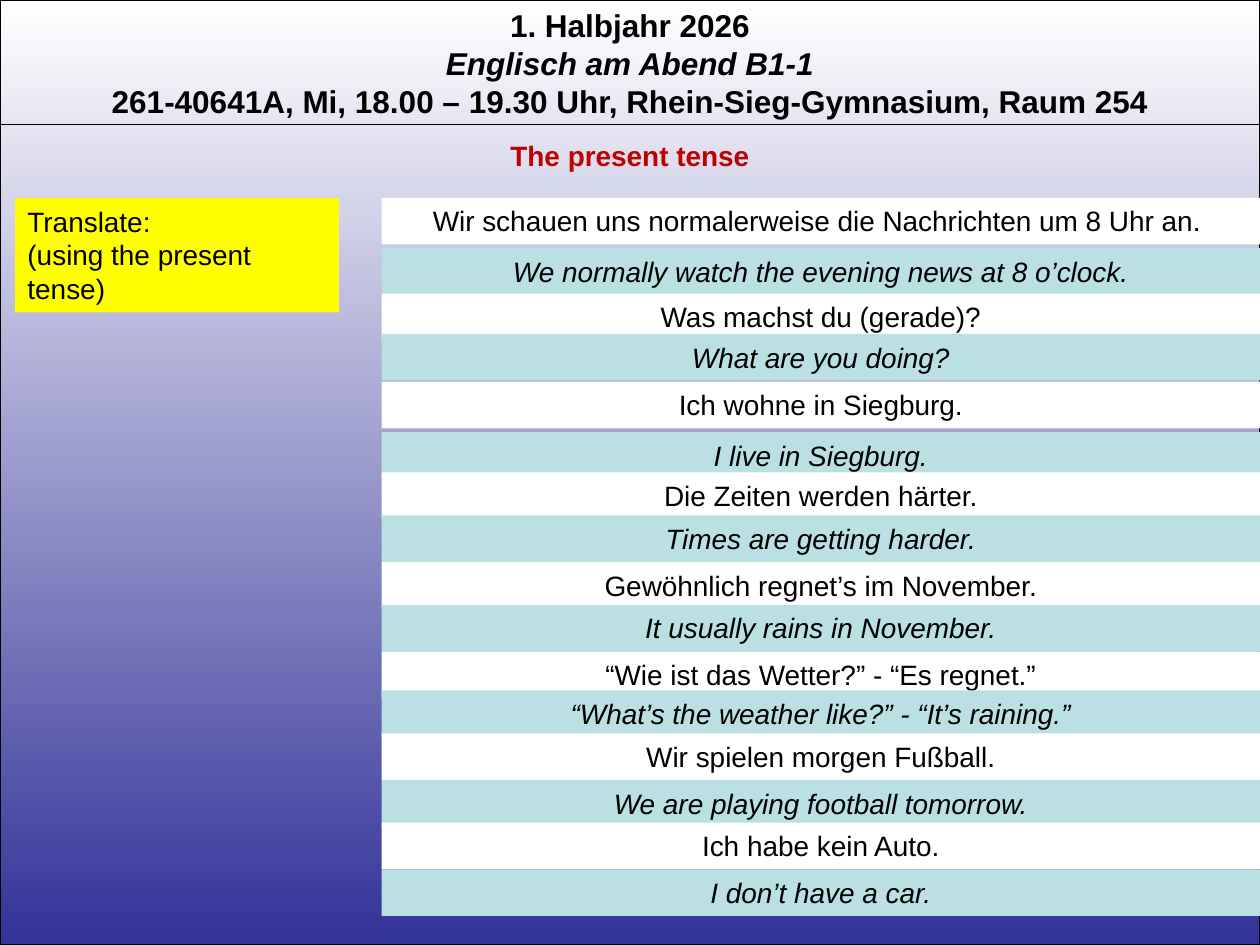
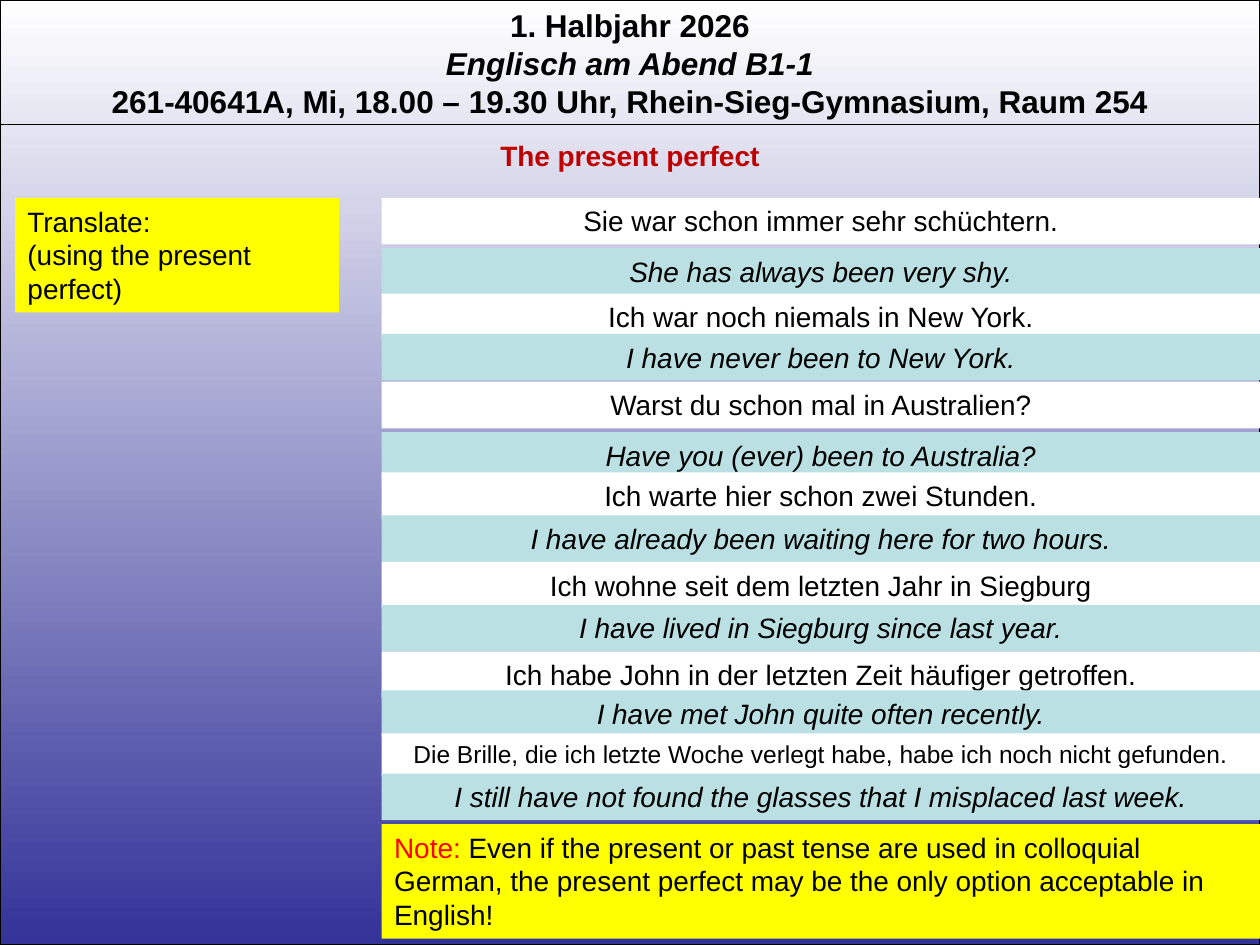
from lxml.etree import SubElement
from pptx import Presentation
from pptx.dml.color import RGBColor
from pptx.enum.shapes import MSO_CONNECTOR, MSO_SHAPE
from pptx.enum.text import MSO_ANCHOR, MSO_AUTO_SIZE, PP_ALIGN
from pptx.oxml.ns import qn
from pptx.util import Inches, Pt

COLORS = {
    "ink": "000000", "sky": "FFFFFF", "ground": "333399", "topic": "C00000",
    "german": "FFFFFF", "english": "BBE0E3", "task": "FFFF00", "note": "FF0000",
}
FONT = "Arial"
BODY_SIZE = 16

# Each paragraph is a list of runs: (text, style)
COURSE = [
    [("1. Halbjahr 2026", {"bold": True, "size": 18})],
    [("Englisch am Abend B1-1", {"bold": True, "italic": True, "size": 18})],
    [("261-40641A, Mi, 18.00 – 19.30 Uhr, Rhein-Sieg-Gymnasium, Raum 254",
      {"bold": True, "size": 18})],
]

LESSONS = [
    {
        "tense": "present tense",
        "sentences": [
            ("Wir schauen uns normalerweise die Nachrichten um 8 Uhr an. ",
             "We normally watch the evening news at 8 o’clock."),
            ("Was machst du (gerade)?", "What are you doing?"),
            ("Ich wohne in Siegburg.", "I live in Siegburg."),
            ("Die Zeiten werden härter.", "Times are getting harder."),
            ("Gewöhnlich regnet’s im November.", "It usually rains in November."),
            ("“Wie ist das Wetter?” - “Es regnet.”",
             "“What’s the weather like?” - “It’s raining.”"),
            ("Wir spielen morgen Fußball.", "We are playing football tomorrow."),
            ("Ich habe kein Auto.", "I don’t have a car."),
        ],
    },
    {
        "tense": "present perfect",
        "sentences": [
            ("Sie war schon immer sehr schüchtern.", "She has always been very shy."),
            ("Ich war noch niemals in New York.", "I have never been to New York."),
            ("Warst du schon mal in Australien?", "Have you (ever) been to Australia?"),
            ("Ich warte hier schon zwei Stunden.",
             "I have already been waiting here for two hours."),
            ("Ich wohne seit dem letzten Jahr in Siegburg",
             "I have lived in Siegburg since last year."),
            ("Ich habe John in der letzten Zeit häufiger getroffen.",
             "I have met John quite often recently."),
            ("Die Brille, die ich letzte Woche verlegt habe, habe ich noch nicht gefunden.",
             "I still have not found the glasses that I misplaced last week."),
        ],
        "note": ("Note: ", "Even if the present or past tense are used in colloquial German, "
                 "the present perfect may be the only option acceptable in English!"),
    },
]

SLIDE_W, SLIDE_H = 10, 7.5
HEADER_LINE_Y = 0.99
ROW_LEFT, ROW_H = 3.03, 0.37
ROW_W = SLIDE_W - ROW_LEFT
# Tops of each German and English row
PAIR_TOPS = [(1.57, 1.97), (2.33, 2.65), (3.03, 3.43), (3.75, 4.09),
             (4.46, 4.8), (5.17, 5.48), (5.82, 6.19), (6.53, 6.9)]
LONG_SENTENCE, LONG_SIZE, LONG_ROW_H = 65, 14, 0.34
TASK_H, NOTE_TOP = 0.91, 6.54


def rgb(name):
    return RGBColor.from_string(COLORS[name])


def write(shape, paragraphs, align=PP_ALIGN.CENTER):
    frame = shape.text_frame
    frame.word_wrap = True
    frame.auto_size = MSO_AUTO_SIZE.SHAPE_TO_FIT_TEXT
    frame.vertical_anchor = MSO_ANCHOR.TOP
    for index, runs in enumerate(paragraphs):
        paragraph = frame.add_paragraph() if index else frame.paragraphs[0]
        paragraph.alignment = align
        for text, style in runs:
            run = paragraph.add_run()
            run.text = text
            run.font.name = FONT
            run.font.size = Pt(style.get("size", BODY_SIZE))
            run.font.bold = style.get("bold", False)
            run.font.italic = style.get("italic", False)
            run.font.color.rgb = rgb(style.get("color", "ink"))


def add_text(slide, box, paragraphs):
    write(slide.shapes.add_textbox(*map(Inches, box)), paragraphs)


def add_rectangle(slide, box):
    rectangle = slide.shapes.add_shape(MSO_SHAPE.RECTANGLE, *map(Inches, box))
    rectangle.shadow.inherit = False
    return rectangle


def add_panel(slide, box, fill, paragraphs, align=PP_ALIGN.CENTER):
    """Add a borderless filled rectangle with text."""
    panel = add_rectangle(slide, box)
    panel.fill.solid()
    panel.fill.fore_color.rgb = rgb(fill)
    panel.line.fill.background()
    write(panel, paragraphs, align)


def outline(line):
    line.color.rgb = rgb("ink")
    line.width = Pt(0.75)


def add_course_frame(slide):
    """Add the gradient backdrop, course header and rule shared by all slides."""
    backdrop = add_rectangle(slide, (0, 0, SLIDE_W, SLIDE_H))
    backdrop.fill.gradient()
    backdrop.fill.gradient_angle = 270
    for stop, color, position in zip(backdrop.fill.gradient_stops, ("sky", "ground"), (0, 1)):
        stop.color.rgb = rgb(color)
        stop.position = position
    outline(backdrop.line)

    add_text(slide, (0, 0, SLIDE_W, 1.01), COURSE)
    rule = slide.shapes.add_connector(
        MSO_CONNECTOR.STRAIGHT,
        *map(Inches, (0, HEADER_LINE_Y, SLIDE_W, HEADER_LINE_Y)))
    outline(rule.line)
    SubElement(rule._element.spPr, qn("a:effectLst"))


def add_sentences(slide, sentences, has_note):
    for index, (german, english) in enumerate(sentences):
        german_top, english_top = PAIR_TOPS[index]
        size, height = BODY_SIZE, ROW_H
        if len(german) > LONG_SENTENCE:
            size, height = LONG_SIZE, LONG_ROW_H
        if has_note and index == len(sentences) - 1:
            english_top -= 0.05  # leaves room for the note
        add_panel(slide, (ROW_LEFT, german_top, ROW_W, height), "german",
                  [[(german, {"size": size})]])
        add_panel(slide, (ROW_LEFT, english_top, ROW_W, ROW_H), "english",
                  [[(english, {"italic": True})]])


def add_lesson(slide, lesson):
    tense, note = lesson["tense"], lesson.get("note")
    add_course_frame(slide)
    add_text(slide, (0, 1.05, SLIDE_W, ROW_H),
             [[(f"The {tense}", {"bold": True, "color": "topic"})]])
    add_panel(slide, (0.12, PAIR_TOPS[0][0], 2.57, TASK_H), "task",
              [[("Translate:", {})], [(f"(using the {tense})", {})]], PP_ALIGN.LEFT)
    add_sentences(slide, lesson["sentences"], note is not None)
    if note:
        label, advice = note
        add_panel(slide, (ROW_LEFT, NOTE_TOP, ROW_W, TASK_H), "task",
                  [[(label, {"color": "note"}), (advice, {})]], PP_ALIGN.LEFT)


def main():
    deck = Presentation()
    deck.slide_width, deck.slide_height = Inches(SLIDE_W), Inches(SLIDE_H)
    for lesson in LESSONS:
        add_lesson(deck.slides.add_slide(deck.slide_layouts[6]), lesson)
    deck.save("out.pptx")


if __name__ == "__main__":
    main()
